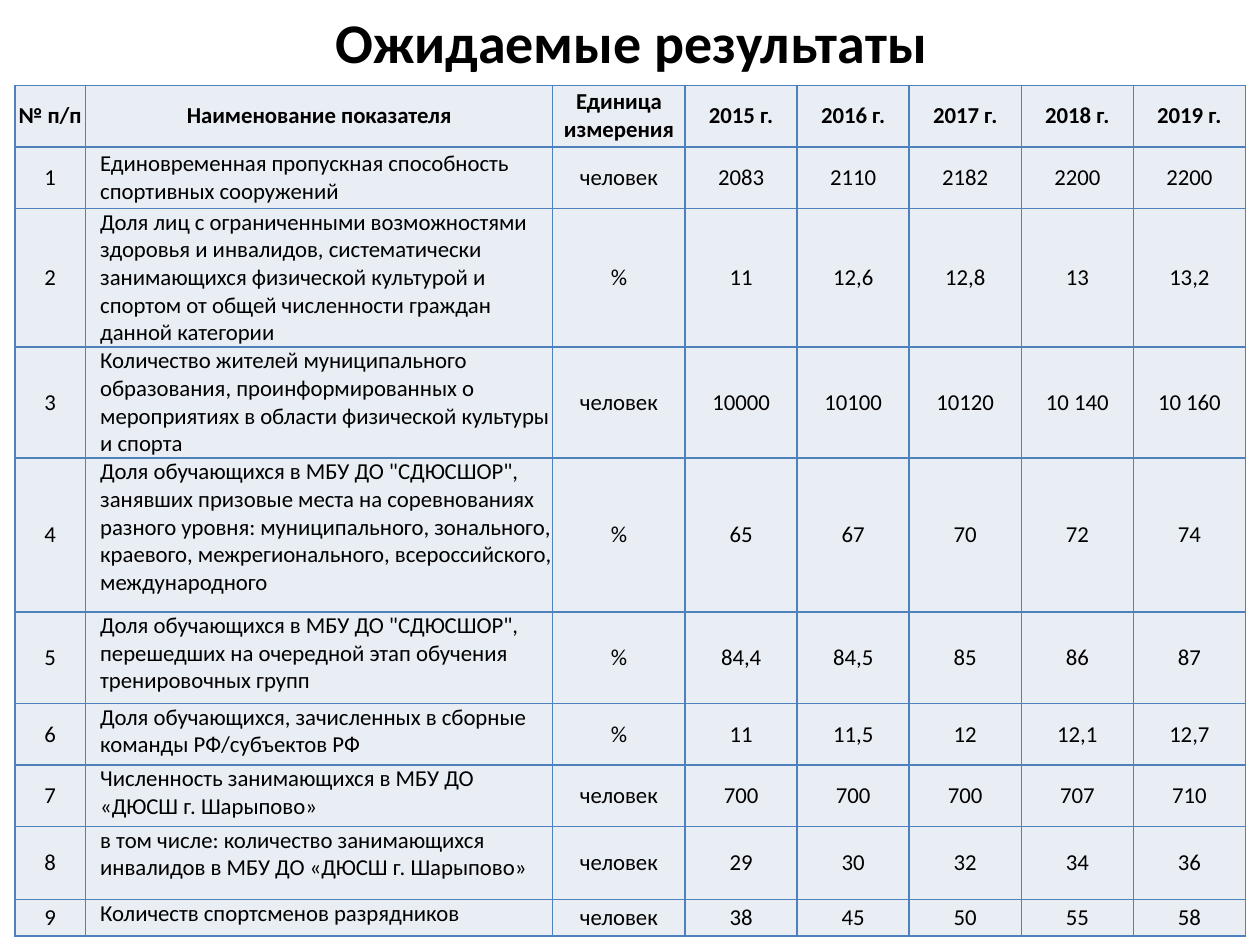
from lxml.etree import fromstring
from pptx import Presentation
from pptx.dml.color import RGBColor
from pptx.enum.text import MSO_ANCHOR, PP_ALIGN
from pptx.oxml.ns import nsdecls
from pptx.util import Cm, Pt

TITLE = "Ожидаемые результаты"
HEAD = ("№ п/п", "Наименование показателя", "Единица измерения",
        "2015 г.", "2016 г.", "2017 г.", "2018 г.", "2019 г.")
GOALS = [
    ("Единовременная пропускная способность спортивных сооружений",
     "человек", "2083", "2110", "2182", "2200", "2200"),
    ("Доля лиц с ограниченными возможностями здоровья и инвалидов, "
     "систематически занимающихся физической культурой и спортом "
     "от общей численности граждан данной категории",
     "%", "11", "12,6", "12,8", "13", "13,2"),
    ("Количество жителей муниципального образования, проинформированных "
     "о мероприятиях в области физической культуры и спорта",
     "человек", "10000", "10100", "10120", "10 140", "10 160"),
    ('Доля обучающихся в МБУ ДО "СДЮСШОР", занявших призовые места на '
     "соревнованиях разного уровня: муниципального, зонального, краевого, "
     "межрегионального, всероссийского, международного",
     "%", "65", "67", "70", "72", "74"),
    ('Доля обучающихся в МБУ ДО "СДЮСШОР", перешедших на очередной этап '
     "обучения тренировочных групп",
     "%", "84,4", "84,5", "85", "86", "87"),
    ("Доля обучающихся, зачисленных в сборные команды РФ/субъектов РФ",
     "%", "11", "11,5", "12", "12,1", "12,7"),
    ("Численность занимающихся в МБУ ДО «ДЮСШ г. Шарыпово»",
     "человек", "700", "700", "700", "707", "710"),
    ("в том числе: количество занимающихся инвалидов "
     "в МБУ ДО «ДЮСШ г. Шарыпово»",
     "человек", "29", "30", "32", "34", "36"),
    ("Количеств спортсменов разрядников",
     "человек", "38", "45", "50", "55", "58"),
]
ROWS = [HEAD] + [(str(num), *goal) for num, goal in enumerate(GOALS, 1)]
WIDTHS = [1.42, 9.42, 2.67] + [2.26] * 5
HEIGHTS = [1.24, 1.24, 2.72, 2.16, 3.1, 1.85, 1.24, 1.24, 1.47, 0.74]
NAME_COL = 1
TOP_FROM = 4

FONT = "Calibri"
BLACK = RGBColor(0x00, 0x00, 0x00)
PALE = RGBColor(0xE9, 0xED, 0xF4)
BLUE = RGBColor(0x4F, 0x81, 0xBD)


def style(par, size, bold):
    for run in par.runs:
        font = run.font
        font.name, font.size, font.bold = FONT, Pt(size), bold
        font.color.rgb = BLACK


def border(cell):
    props = cell._tc.get_or_add_tcPr()
    for pos, side in enumerate("LRTB"):
        props.insert(pos, fromstring(
            f'<a:ln{side} {nsdecls("a")} w="{Pt(1)}"><a:solidFill>'
            f'<a:srgbClr val="{BLUE}"/></a:solidFill></a:ln{side}>'))


def fill_cell(cell, text, row, col):
    named = row > 0 and col == NAME_COL
    cell.text_frame.text = text
    cell.margin_left = cell.margin_right = 0
    cell.margin_top = cell.margin_bottom = 0
    high = named and row >= TOP_FROM
    cell.vertical_anchor = MSO_ANCHOR.TOP if high else MSO_ANCHOR.MIDDLE
    par = cell.text_frame.paragraphs[0]
    par.alignment = PP_ALIGN.LEFT if named else PP_ALIGN.CENTER
    if named:
        par._p.get_or_add_pPr().set("marL", str(Cm(0.3)))
    style(par, 13, row == 0)
    cell.fill.solid()
    cell.fill.fore_color.rgb = PALE
    border(cell)


def main():
    deck = Presentation()
    deck.slide_width, deck.slide_height = Cm(25.4), Cm(19.05)
    slide = deck.slides.add_slide(deck.slide_layouts[5])

    title = slide.shapes.title
    title.left, title.top = Cm(1.3), Cm(-0.28)
    title.width, title.height = Cm(22.86), Cm(2.2)
    title.text_frame.text = TITLE
    title.text_frame.vertical_anchor = MSO_ANCHOR.MIDDLE
    par = title.text_frame.paragraphs[0]
    par.alignment = PP_ALIGN.CENTER
    style(par, 32, True)

    table = slide.shapes.add_table(
        len(ROWS), len(HEAD), Cm(0.3), Cm(1.72),
        Cm(sum(WIDTHS)), Cm(sum(HEIGHTS))).table
    for col, width in zip(table.columns, WIDTHS):
        col.width = Cm(width)
    for row, height in zip(table.rows, HEIGHTS):
        row.height = Cm(height)
    for row, texts in enumerate(ROWS):
        for col, text in enumerate(texts):
            fill_cell(table.cell(row, col), text, row, col)

    deck.save("out.pptx")


if __name__ == "__main__":
    main()
